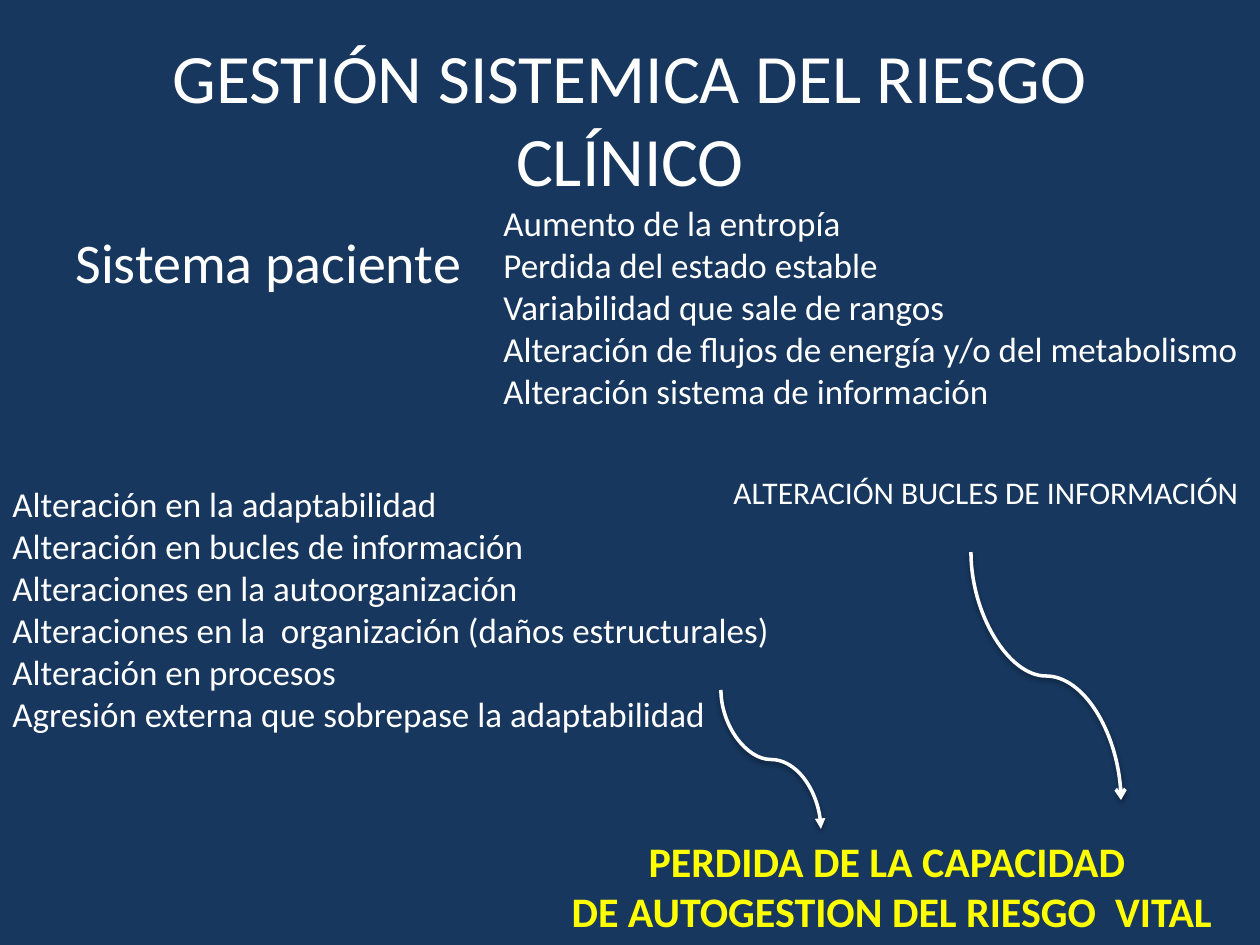
from lxml.etree import SubElement
from pptx import Presentation
from pptx.dml.color import RGBColor
from pptx.enum.shapes import MSO_CONNECTOR
from pptx.enum.text import MSO_ANCHOR, MSO_AUTO_SIZE, PP_ALIGN
from pptx.oxml.ns import qn
from pptx.util import Pt

EMU_PER_PX = 914400 / 126
NAVY = RGBColor(0x17, 0x37, 0x5E)
WHITE = RGBColor(0xFF, 0xFF, 0xFF)
YELLOW = RGBColor(0xFF, 0xFF, 0x00)
FONT = "Calibri"

ENTROPY_EFFECTS = [
    "Aumento de la entropía",
    "Perdida del estado estable",
    "Variabilidad que sale de rangos",
    "Alteración de flujos de energía y/o del metabolismo",
    "Alteración sistema de información",
]
ADAPTATION_FAILURES = [
    "Alteración en la adaptabilidad",
    "Alteración en bucles de información",
    "Alteraciones en la autoorganización",
    "Alteraciones en la  organización (daños estructurales)",
    "Alteración en procesos",
    "Agresión externa que sobrepase la adaptabilidad",
]
OUTCOME = ["PERDIDA DE LA CAPACIDAD", " DE AUTOGESTION DEL RIESGO  VITAL"]


def px(length):
    """Turn pixels into EMU."""
    return round(length * EMU_PER_PX)


def write_lines(frame, lines, size, color=WHITE, align=PP_ALIGN.LEFT, bold=False, before=0):
    """Write one paragraph per line into a text frame."""
    frame.word_wrap = True
    frame.auto_size = MSO_AUTO_SIZE.NONE
    for index, line in enumerate(lines):
        paragraph = frame.add_paragraph() if index else frame.paragraphs[0]
        paragraph.alignment = align
        paragraph.space_before = Pt(before)
        run = paragraph.add_run()
        run.text = line
        run.font.name = FONT
        run.font.size = Pt(size)
        run.font.bold = bold
        run.font.color.rgb = color


def add_title(slide, text):
    """Place and fill the title placeholder."""
    title = slide.shapes.title
    title.left, title.top, title.width, title.height = map(px, (63, 38, 1134, 158))
    title.text_frame.vertical_anchor = MSO_ANCHOR.MIDDLE
    write_lines(title.text_frame, [text], 39.6, align=PP_ALIGN.CENTER)


def add_text(slide, box, lines, size, **style):
    """Add a text box at left, top, width, height."""
    label = slide.shapes.add_textbox(*map(px, box))
    write_lines(label.text_frame, lines, size, **style)


def add_shadow(properties):
    """Add a soft shadow that falls straight down."""
    effects = SubElement(properties, qn("a:effectLst"))
    shadow = SubElement(effects, qn("a:outerShdw"), blurRad="40000", dist="20000",
                        dir="5400000", rotWithShape="0")
    black = SubElement(shadow, qn("a:srgbClr"), val="000000")
    SubElement(black, qn("a:alpha"), val="38000")


def add_falling_arrow(slide, start, end, head):
    """Add a curved arrow that leaves and arrives vertically."""
    (x1, y1), (x2, y2) = start, end
    center_x, center_y = (x1 + x2) / 2, (y1 + y2) / 2
    half_width, half_height = (y2 - y1) / 2, (x2 - x1) / 2
    arrow = slide.shapes.add_connector(
        MSO_CONNECTOR.CURVE,
        px(center_x + half_width), px(center_y - half_height),
        px(center_x - half_width), px(center_y + half_height))
    arrow.line.color.rgb = WHITE
    arrow.line.width = Pt(2)
    properties = arrow._element.spPr
    properties.find(qn("a:xfrm")).set("rot", "16200000")
    SubElement(properties.find(qn("a:ln")), qn("a:tailEnd"), type=head)
    add_shadow(properties)


def main():
    """Build and save the slide."""
    deck = Presentation()
    deck.slide_width, deck.slide_height = px(1260), px(945)
    slide = deck.slides.add_slide(deck.slide_layouts[5])
    slide.background.fill.solid()
    slide.background.fill.fore_color.rgb = NAVY

    add_title(slide, "GESTIÓN SISTEMICA DEL RIESGO CLÍNICO")
    add_text(slide, (63, 221, 1134, 624), ["Sistema paciente"], 32, before=6.4)
    add_text(slide, (491, 195, 769, 224), ENTROPY_EFFECTS, 20)
    add_text(slide, (0, 476, 793, 352), ADAPTATION_FAILURES, 20)
    add_text(slide, (721, 467, 539, 50), ["ALTERACIÓN BUCLES DE INFORMACIÓN"], 18)
    add_text(slide, (543, 829, 688, 116), OUTCOME, 24,
             color=YELLOW, align=PP_ALIGN.CENTER, bold=True)
    add_falling_arrow(slide, (721, 690), (821, 829), "triangle")
    add_falling_arrow(slide, (971, 552), (1121, 800), "arrow")
    deck.save("out.pptx")


if __name__ == "__main__":
    main()
